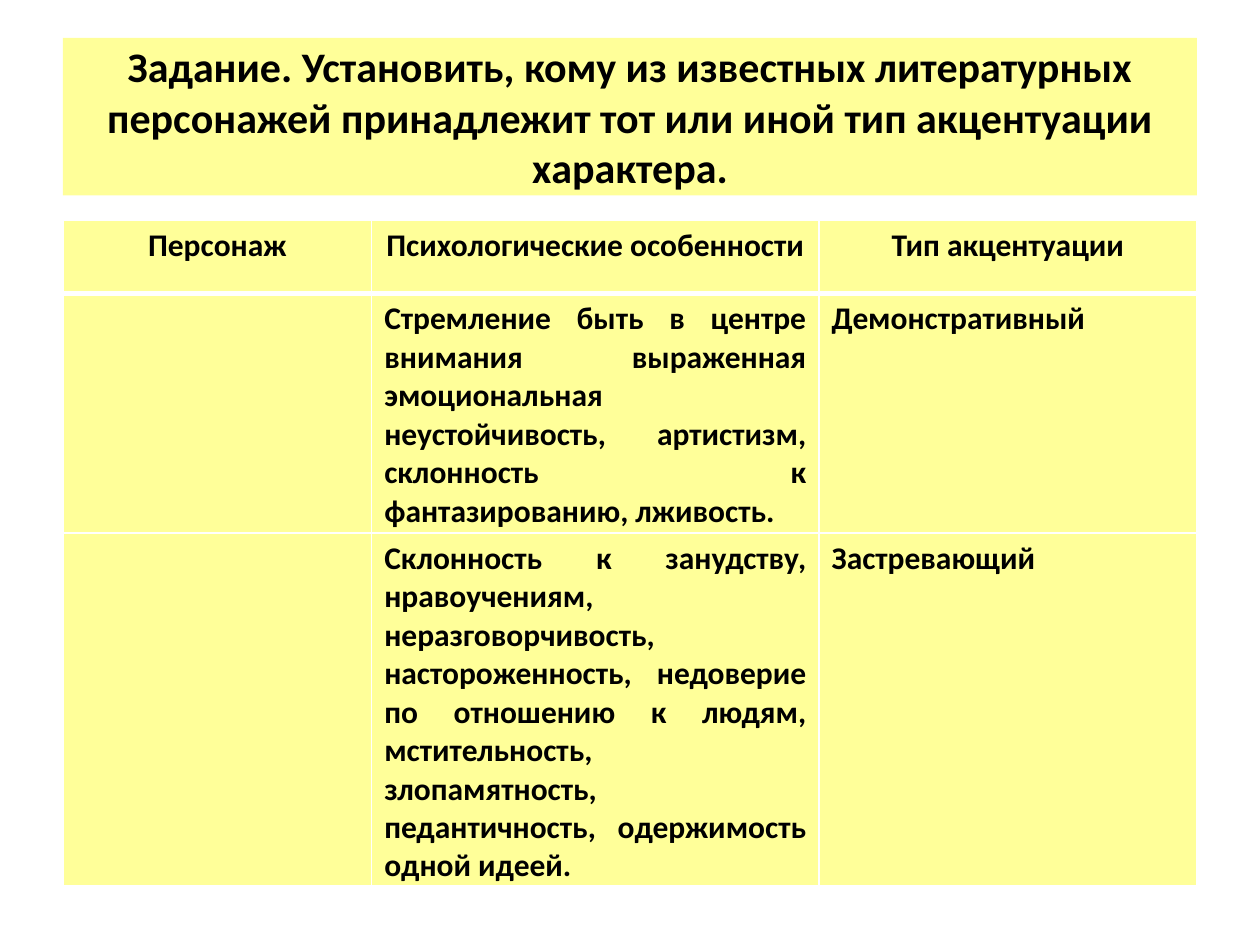
import pptx
import pptx.dml.color
import pptx.enum.text
import pptx.oxml
import pptx.oxml.ns
import pptx.util

Inches = pptx.util.Inches
ALIGN = pptx.enum.text.PP_ALIGN

YELLOW = "FFFF99"
WHITE = "FFFFFF"
BLACK = "000000"

TASK = ("Задание. Установить, кому из известных литературных персонажей "
        "принадлежит тот или иной тип акцентуации характера.")
ROWS = [
    ["Персонаж", "Психологические особенности", "Тип акцентуации"],
    ["",
     "Стремление быть в центре внимания выраженная эмоциональная "
     "неустойчивость, артистизм, склонность к фантазированию, лживость.",
     "Демонстративный"],
    ["",
     "Склонность к занудству, нравоучениям, неразговорчивость, "
     "настороженность, недоверие по отношению к людям, мстительность, "
     "злопамятность, педантичность, одержимость одной идеей.",
     "Застревающий"],
]
COLUMN_WIDTHS = [2.45, 3.55, 3]
ROW_HEIGHTS = [0.58, 1.74, 1.74]


def paint(fill, color):
    fill.solid()
    fill.fore_color.rgb = pptx.dml.color.RGBColor.from_string(color)


def write(frame, text, size, align):
    paragraph = frame.paragraphs[0]
    paragraph.alignment = align
    run = paragraph.add_run()
    run.text = text
    run.font.name = "Calibri"
    run.font.size = pptx.util.Pt(size)
    run.font.bold = True
    paint(run.font.fill, BLACK)


def add_heading(slide, text):
    heading = slide.shapes.add_textbox(Inches(0.5), Inches(0.3), Inches(9), Inches(1.25))
    paint(heading.fill, YELLOW)
    frame = heading.text_frame
    frame.word_wrap = True
    frame.vertical_anchor = pptx.enum.text.MSO_ANCHOR.MIDDLE
    write(frame, text, 24, ALIGN.CENTER)


def set_borders(cell, widths):
    """Draw white borders; widths maps a side (L, R, T, B) to points."""
    properties = cell._tc.get_or_add_tcPr()
    for position, (side, width) in enumerate(widths.items()):
        border = pptx.oxml.parse_xml(
            f'<a:ln{side} {pptx.oxml.ns.nsdecls("a")} w="{pptx.util.Pt(width)}">'
            f'<a:solidFill><a:srgbClr val="{WHITE}"/></a:solidFill></a:ln{side}>')
        properties.insert(position, border)


def add_character_table(slide):
    frame = slide.shapes.add_table(len(ROWS), len(COLUMN_WIDTHS), Inches(0.5),
                                   Inches(1.75), Inches(9), Inches(5.28))
    table = frame.table
    for column, width in zip(table.columns, COLUMN_WIDTHS):
        column.width = Inches(width)
    for row, height in zip(table.rows, ROW_HEIGHTS):
        row.height = Inches(height)
    frame.height = Inches(5.28)

    for r, texts in enumerate(ROWS):
        for c, text in enumerate(texts):
            cell = table.cell(r, c)
            paint(cell.fill, YELLOW)
            set_borders(cell, {"L": 1, "R": 1, "T": 3 if r == 1 else 1,
                               "B": 3 if r == 0 else 1})
            if text:
                write(cell.text_frame, text, 18, ALIGN.JUSTIFY if r else ALIGN.CENTER)


def main():
    deck = pptx.Presentation()
    deck.slide_width, deck.slide_height = Inches(10), Inches(7.5)
    slide = deck.slides.add_slide(deck.slide_layouts[6])
    add_heading(slide, TASK)
    add_character_table(slide)
    deck.save("out.pptx")


if __name__ == "__main__":
    main()
